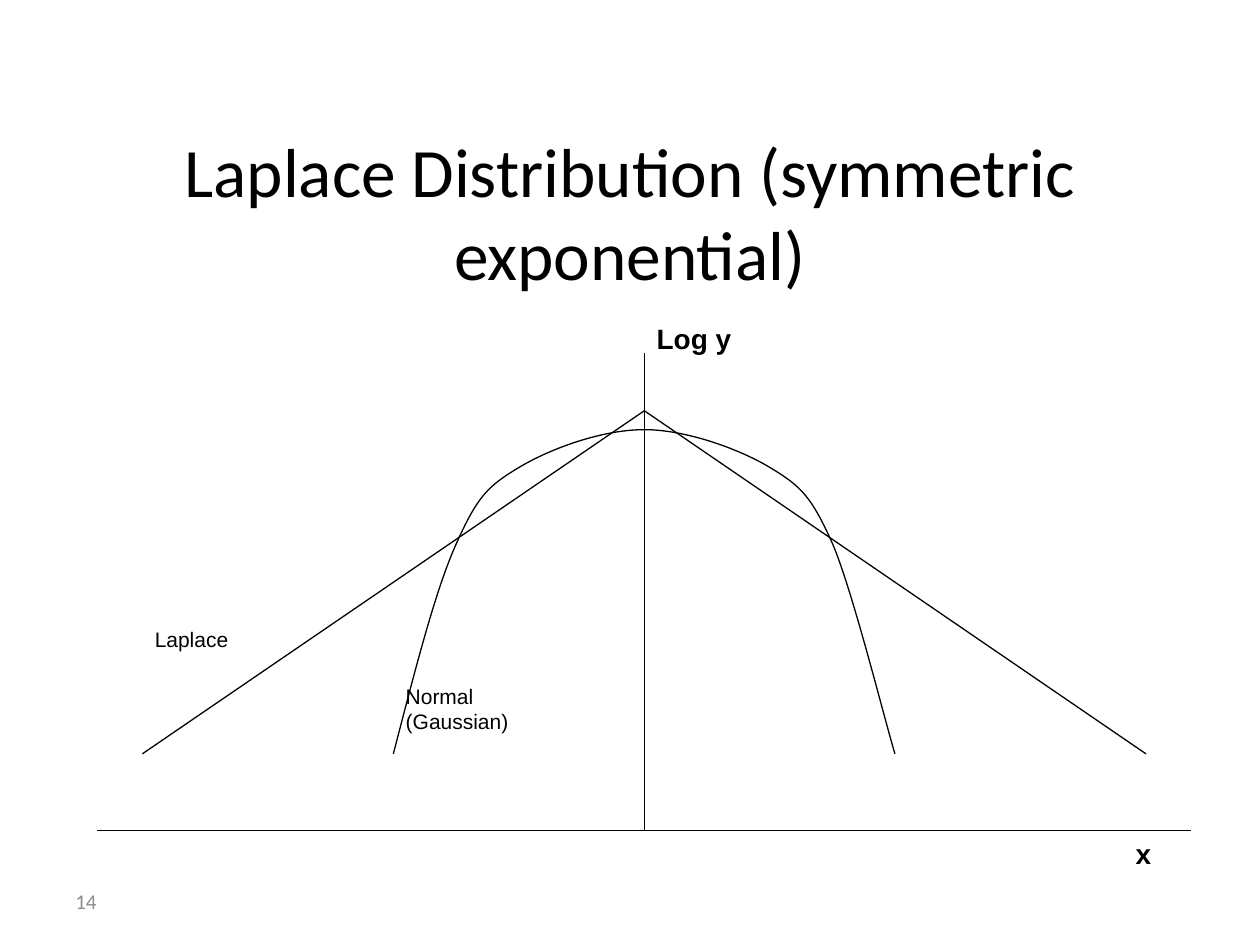
from dataclasses import dataclass

import pptx
import pptx.dml.color
import pptx.enum.shapes
import pptx.enum.text
import pptx.oxml.ns
import pptx.util
from lxml import etree

COLORS = {"ink": "000000", "number": "8C8C8C"}
FONTS = {"body": "Arial", "title": "Calibri"}

presentation = pptx.Presentation()
presentation.slide_width = pptx.util.Inches(10)
presentation.slide_height = pptx.util.Inches(7.5)

# Grid of square cells, counted in columns and rows
COLUMNS, ROWS = 100, 75
CELL_WIDTH = presentation.slide_width / COLUMNS
CELL_HEIGHT = presentation.slide_height / ROWS

# Diagram positions on the grid
AXIS_COLUMN, AXIS_ROW = 51.14, 65.9
PEAK_ROW, FOOT_ROW = 32.6, 59.83

Point = tuple[float, float]


@dataclass
class Line:
    start: Point
    end: Point


@dataclass
class Label:
    text: str
    box: tuple[float, float, float, float]
    size: float = 12
    bold: bool = False


LINES = [
    Line((AXIS_COLUMN, 28), (AXIS_COLUMN, AXIS_ROW)),
    Line((7.7, AXIS_ROW), (94.55, AXIS_ROW)),
    Line((11.3, FOOT_ROW), (AXIS_COLUMN, PEAK_ROW)),
    Line((AXIS_COLUMN, PEAK_ROW), (90.95, FOOT_ROW)),
]

LABELS = [
    Label("x", (89.14, AXIS_ROW, 5.4, 4.5), size=16, bold=True),
    Label("Log y", (AXIS_COLUMN, 25, 12.7, 7.6), size=16, bold=True),
    Label("Normal\n(Gaussian)", (31.22, 53.76, 16.3, 6.1)),
    Label("Laplace", (11.3, 49.2, 14.5, 6.1)),
]

# Bell curve: a start, then two control points and an end for each segment
BELL_START = (31.22, FOOT_ROW)
BELL_SEGMENTS = [
    ((32.9, 53.4), (34.5, 47), (36.2, 43.2)),
    ((37.9, 39.4), (38.7, 38.6), (41.2, 37.1)),
    ((43.7, 35.6), (47.8, 34.1), (AXIS_COLUMN, 34.1)),
    ((54.4, 34.1), (58.6, 35.6), (61.1, 37.1)),
    ((63.6, 38.6), (64.4, 39.4), (66.1, 43.2)),
    ((67.7, 47), (70.2, 57.1), (71.03, FOOT_ROW)),
]


def place(column: float, row: float) -> tuple[int, int]:
    return round(column * CELL_WIDTH), round(row * CELL_HEIGHT)


def color(name: str) -> pptx.dml.color.RGBColor:
    return pptx.dml.color.RGBColor.from_string(COLORS[name])


def write_text(shape, text: str, *, size: float, font: str = "body",
               ink: str = "ink", bold: bool = False, align=None,
               anchor=pptx.enum.text.MSO_ANCHOR.TOP) -> None:
    frame = shape.text_frame
    frame.word_wrap = True
    frame.auto_size = pptx.enum.text.MSO_AUTO_SIZE.NONE
    frame.vertical_anchor = anchor
    frame.text = text
    for paragraph in frame.paragraphs:
        paragraph.alignment = align
        for run in paragraph.runs:
            run.font.name = FONTS[font]
            run.font.size = pptx.util.Pt(size)
            run.font.bold = bold
            run.font.color.rgb = color(ink)


def style_line(shape) -> None:
    shape.line.color.rgb = color("ink")
    shape.line.width = pptx.util.Pt(0.75)


def draw_line(shapes, line: Line) -> None:
    connector = shapes.add_connector(
        pptx.enum.shapes.MSO_CONNECTOR.STRAIGHT,
        *place(*line.start), *place(*line.end))
    style_line(connector)
    properties = connector._element.spPr
    etree.SubElement(properties, pptx.oxml.ns.qn("a:effectLst"))


def draw_label(shapes, label: Label) -> None:
    left, top, width, height = label.box
    box = shapes.add_textbox(*place(left, top), *place(width, height))
    write_text(box, label.text, size=label.size, bold=label.bold)


def draw_curve(shapes, start: Point, segments) -> None:
    builder = shapes.build_freeform(*place(*start))
    builder.add_line_segments(
        [place(*point) for segment in segments for point in segment],
        close=False)
    curve = builder.convert_to_shape()
    # Join every three straight steps into one cubic segment
    steps = list(curve._element.iter(pptx.oxml.ns.qn("a:lnTo")))
    for first in range(0, len(steps), 3):
        cubic = etree.Element(pptx.oxml.ns.qn("a:cubicBezTo"))
        steps[first].addprevious(cubic)
        for step in steps[first:first + 3]:
            cubic.append(step[0])
            step.getparent().remove(step)
    curve.shadow.inherit = False
    curve.fill.background()
    style_line(curve)


slide = presentation.slides.add_slide(presentation.slide_layouts[5])

# Title
title = slide.shapes.title
title.left, title.top = place(7.5, 12.2)
title.width, title.height = place(85, 9.2)
write_text(title, "Laplace Distribution (symmetric exponential)",
           size=39.6, font="title",
           align=pptx.enum.text.PP_ALIGN.CENTER,
           anchor=pptx.enum.text.MSO_ANCHOR.MIDDLE)

# Slide number
number = slide.shapes.add_textbox(*place(5, 69.5), *place(23.3, 4))
write_text(number, "14", size=12, font="title", ink="number",
           anchor=pptx.enum.text.MSO_ANCHOR.MIDDLE)

# Diagram: axes and Laplace lines, bell curve, labels
diagram = slide.shapes.add_group_shape().shapes
for line in LINES:
    draw_line(diagram, line)
draw_curve(diagram, BELL_START, BELL_SEGMENTS)
for label in LABELS:
    draw_label(diagram, label)

presentation.save("out.pptx")
